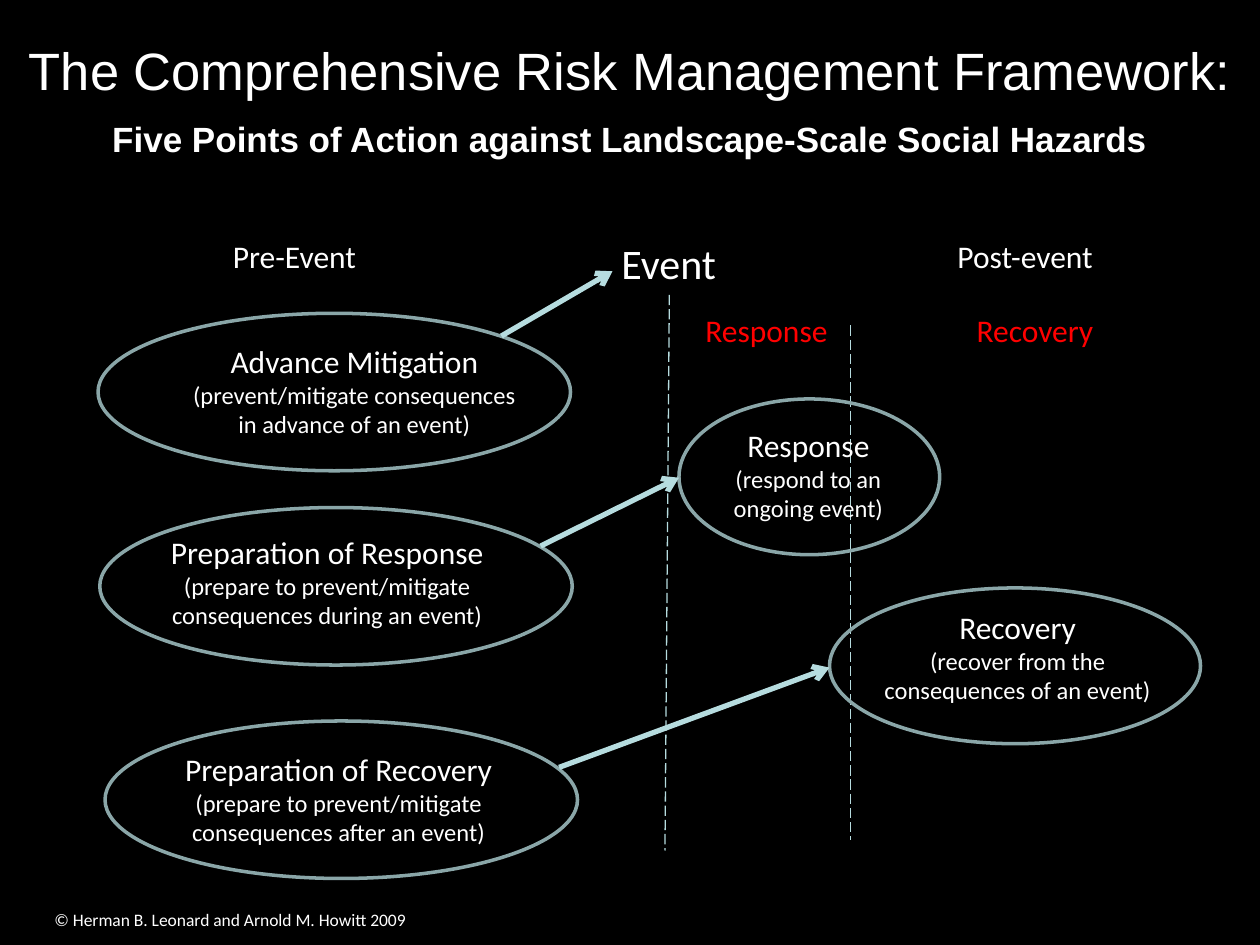
from dataclasses import dataclass

from lxml import etree
from pptx import Presentation
from pptx.dml.color import RGBColor
from pptx.enum.dml import MSO_LINE
from pptx.enum.shapes import MSO_CONNECTOR, MSO_SHAPE
from pptx.enum.text import MSO_ANCHOR, MSO_AUTO_SIZE, PP_ALIGN
from pptx.oxml.ns import qn
from pptx.util import Pt

LEFT, CENTER = PP_ALIGN.LEFT, PP_ALIGN.CENTER
TOP = MSO_ANCHOR.TOP
NO_AUTOSIZE = MSO_AUTO_SIZE.NONE
LONG_DASH = MSO_LINE.LONG_DASH
STRAIGHT = MSO_CONNECTOR.STRAIGHT
OVAL = MSO_SHAPE.OVAL


@dataclass(frozen=True)
class Theme:
    background: str = "000000"
    text: str = "FFFFFF"
    phase: str = "FF0000"
    outline: str = "8AA6A8"
    arrow: str = "B6DCDF"
    heading_font: str = "Arial"
    body_font: str = "Calibri"
    title: int = 30
    event: int = 24
    subtitle: int = 20
    label: int = 18
    detail: int = 14
    credit: int = 10


THEME = Theme()


def apply(target, values):
    for name, value in values.items():
        setattr(target, name, value)


def format_font(font, size, color=THEME.text, name=THEME.body_font, bold=False):
    apply(font, {"size": Pt(size), "name": name, "bold": bold})
    font.color.rgb = RGBColor.from_string(color)


def add_text(slide, box, lines, align=LEFT):
    """Place lines of (text, font format) in the box."""
    frame = slide.shapes.add_textbox(*map(Pt, box)).text_frame
    apply(frame, {"word_wrap": False, "auto_size": NO_AUTOSIZE, "vertical_anchor": TOP})
    for index, (text, style) in enumerate(lines):
        paragraph = frame.add_paragraph() if index else frame.paragraphs[0]
        paragraph.alignment = align
        run = paragraph.add_run()
        run.text = text
        format_font(run.font, **style)


def add_line(slide, start, end, color, width, dash=None, arrow=False):
    connector = slide.shapes.add_connector(STRAIGHT, *map(Pt, (*start, *end)))
    apply(connector.line, {"width": Pt(width), "dash_style": dash})
    connector.line.color.rgb = RGBColor.from_string(color)
    properties = connector.line._get_or_add_ln()
    if arrow:
        etree.SubElement(properties, qn("a:tailEnd"), type="arrow")
    etree.SubElement(properties.getparent(), qn("a:effectLst"))


def add_heading(slide, box):
    left, top, width, height = box
    title = slide.shapes.title
    apply(title, dict(zip(("left", "top", "width", "height"), map(Pt, box))))
    frame = title.text_frame
    frame.text = "The Comprehensive Risk Management Framework:"
    apply(frame, {"word_wrap": True, "auto_size": NO_AUTOSIZE,
                  "vertical_anchor": TOP, "margin_top": Pt(3.6)})
    frame.paragraphs[0].alignment = CENTER
    format_font(frame.paragraphs[0].runs[0].font, THEME.title, name=THEME.heading_font)
    add_text(slide, (left, top + 45.5, width, 32), [
        ("Five Points of Action against Landscape-Scale Social Hazards",
         {"size": THEME.subtitle, "name": THEME.heading_font, "bold": True}),
    ], CENTER)


def add_timeline(slide, box):
    """Phase labels and the dashed lines that divide the phases."""
    left, top, width, height = box
    labels = (
        ("Pre-Event", 0, 0, 86, THEME.label, THEME.text),
        ("Event", 222, 0, 69, THEME.event, THEME.text),
        ("Post-event", 414, 0, 93, THEME.label, THEME.text),
        ("Response", 270, 42, 92, THEME.label, THEME.phase),
        ("Recovery", 425, 42, 89, THEME.label, THEME.phase),
    )
    for text, dx, dy, label_width, size, color in labels:
        add_text(slide, (left + dx, top + dy, label_width, 30),
                 [(text, {"size": size, "color": color})])
    bottom = top + height
    dividers = (
        ((left + 256.5, top + 36.5), (left + 254, bottom)),
        ((left + 360, top + 54), (left + 360, bottom - 6)),
    )
    for start, end in dividers:
        add_line(slide, start, end, THEME.arrow, 0.75, LONG_DASH)


def add_action_point(slide, box, caption_shift, name, details):
    """Outlined oval with a caption shifted by (dx, dy) from its top left."""
    left, top, width, height = box
    oval = slide.shapes.add_shape(OVAL, *map(Pt, box))
    oval.shadow.inherit = False
    oval.fill.background()
    oval.line.width = Pt(2)
    oval.line.color.rgb = RGBColor.from_string(THEME.outline)
    dx, dy = caption_shift
    lines = [(name, {"size": THEME.label})]
    lines += [(detail, {"size": THEME.detail}) for detail in details]
    add_text(slide, (left + dx, top + dy, width, 63), lines, CENTER)


def add_action_points(slide):
    points = (
        ((56, 179, 270, 90), (11.5, 13), "Advance Mitigation",
         ("(prevent/mitigate consequences", "in advance of an event)")),
        ((57, 290, 270, 90), (-5, 11), "Preparation of Response",
         ("(prepare to prevent/mitigate", "consequences during an event)")),
        ((60, 412, 270, 90), (-1.5, 13), "Preparation of Recovery",
         ("(prepare to prevent/mitigate", "consequences after an event)")),
        ((388, 228, 149, 89), (-0.5, 12), "Response",
         ("(respond to an", "ongoing event)")),
        ((474, 336, 212, 89), (1.5, 8), "Recovery",
         ("(recover from the", "consequences of an event)")),
    )
    for point in points:
        add_action_point(slide, *point)
    # Arrows from each preparation to what it acts on
    links = (
        ((286.5, 192), (350, 155)),
        ((309, 312), (388, 273)),
        ((319.5, 438.5), (474, 381.5)),
    )
    for start, end in links:
        add_line(slide, start, end, THEME.arrow, 3, arrow=True)


def main():
    presentation = Presentation()
    apply(presentation, {"slide_width": Pt(720), "slide_height": Pt(540)})
    slide = presentation.slides.add_slide(presentation.slide_layouts[5])
    slide.background.fill.solid()
    slide.background.fill.fore_color.rgb = RGBColor.from_string(THEME.background)

    add_heading(slide, (0, 18, 720, 56))
    add_timeline(slide, (126, 132, 514, 354))
    add_action_points(slide)
    # Copyright line
    add_text(slide, (24, 516, 218, 20), [
        ("© Herman B. Leonard and Arnold M. Howitt 2009", {"size": THEME.credit}),
    ])
    presentation.save("out.pptx")


if __name__ == "__main__":
    main()
